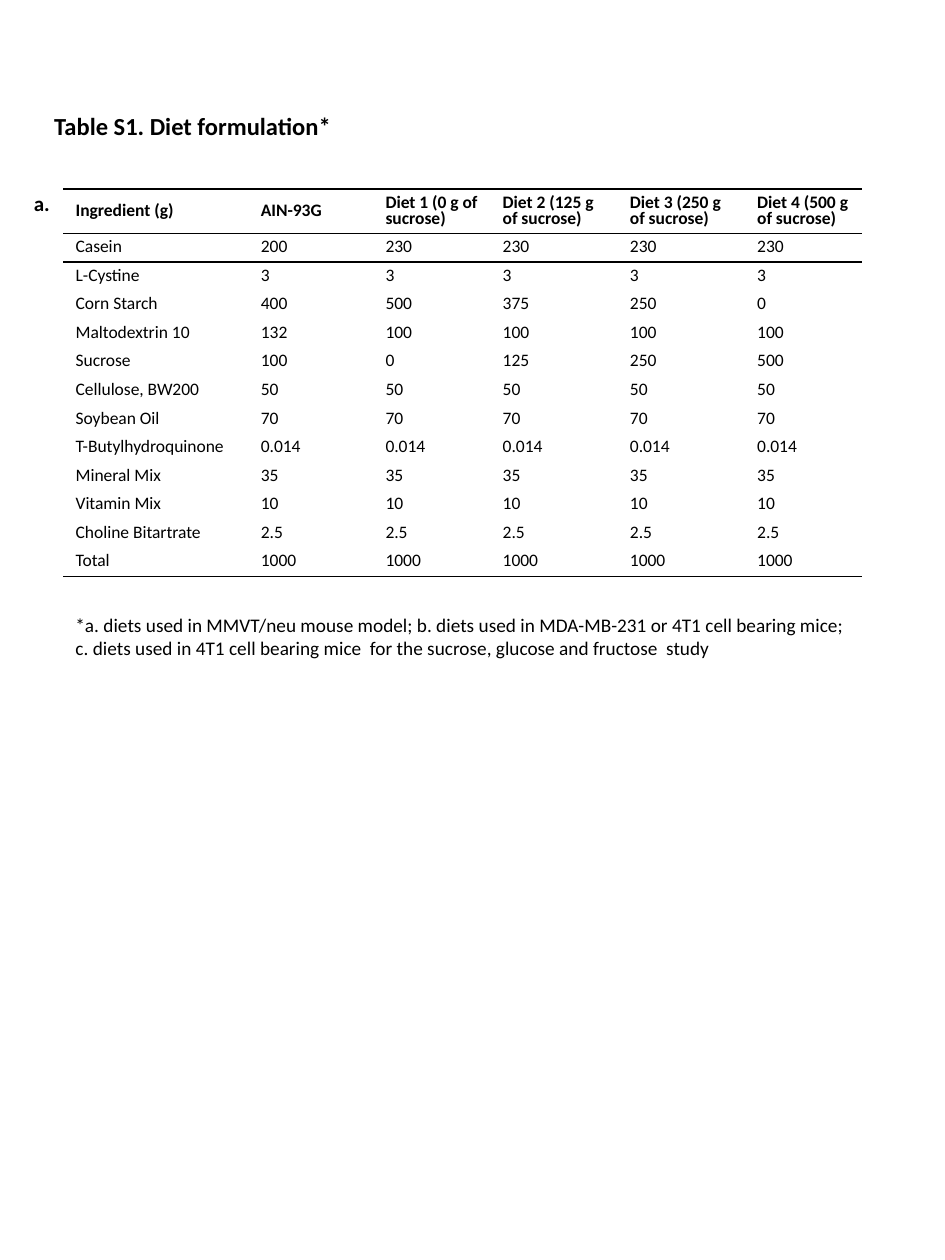
from lxml.etree import SubElement
from pptx import Presentation
from pptx.dml.color import RGBColor
from pptx.enum.text import MSO_ANCHOR, MSO_AUTO_SIZE, PP_ALIGN
from pptx.oxml.ns import qn
from pptx.util import Inches, Pt

SLIDE_WIDTH, SLIDE_HEIGHT = Inches(7.5), Inches(10)
BLACK, WHITE = "000000", "FFFFFF"
PLAIN_TABLE_STYLE = "{2D5ABB26-0587-4C30-8999-92F81FD0307C}"

# Areas as percentages of the slide: left, top, width, height
TITLE_AREA = (4.4, 5.4, 87.73, 9.2)
TABLE_AREA = (6.67, 15, 84.53, 26.1)
LABEL_AREA = (2.27, 14.6, 4.4, 3)
NOTE_AREA = (6.67, 48.2, 84.4, 4.7)

COLUMN_WIDTHS = (1.47, 0.99, 0.93, 1.01, 1.01, 0.93)
HEADER_HEIGHT, ROW_HEIGHT = 0.21, 0.2  # rows grow to fit their text

DIET_TABLE = [
    ("Ingredient (g)", "AIN-93G", "Diet 1 (0 g of sucrose)", "Diet 2 (125 g of sucrose)",
     "Diet 3 (250 g of sucrose)", "Diet 4 (500 g of sucrose)"),
    ("Casein", 200, 230, 230, 230, 230),
    ("L-Cystine", 3, 3, 3, 3, 3),
    ("Corn Starch", 400, 500, 375, 250, 0),
    ("Maltodextrin 10", 132, 100, 100, 100, 100),
    ("Sucrose", 100, 0, 125, 250, 500),
    ("Cellulose, BW200", 50, 50, 50, 50, 50),
    ("Soybean Oil", 70, 70, 70, 70, 70),
    ("T-Butylhydroquinone", 0.014, 0.014, 0.014, 0.014, 0.014),
    ("Mineral Mix", 35, 35, 35, 35, 35),
    ("Vitamin Mix", 10, 10, 10, 10, 10),
    ("Choline Bitartrate", 2.5, 2.5, 2.5, 2.5, 2.5),
    ("Total", 1000, 1000, 1000, 1000, 1000),
]
FOOTNOTE = ("*a. diets used in MMVT/neu mouse model; b. diets used in MDA-MB-231 or 4T1 cell "
            "bearing mice; c. diets used in 4T1 cell bearing mice  for the sucrose, glucose "
            "and fructose  study")


def color(value):
    return RGBColor.from_string(value)


def place(area):
    """Turn percentages of the slide into left, top, width and height."""
    sizes = (SLIDE_WIDTH, SLIDE_HEIGHT) * 2
    return [int(size * share / 100) for size, share in zip(sizes, area)]


def set_attributes(target, values):
    for name, value in values.items():
        setattr(target, name, value)


def write_text(text_frame, text, size, bold=False, line_spacing=None):
    text_frame.text = str(text)
    paragraph = text_frame.paragraphs[0]
    set_attributes(paragraph, {"alignment": PP_ALIGN.LEFT, "line_spacing": line_spacing})
    font = paragraph.runs[0].font
    set_attributes(font, {"name": "Calibri", "size": Pt(size), "bold": bold})
    font.color.rgb = color(BLACK)


def add_title(slide, text):
    title = slide.shapes.title
    set_attributes(title, dict(zip(("left", "top", "width", "height"), place(TITLE_AREA))))
    title.text_frame.vertical_anchor = MSO_ANCHOR.MIDDLE
    write_text(title.text_frame, text, 14, bold=True)


def add_text(slide, area, text, size, bold=False, wrap=True):
    text_frame = slide.shapes.add_textbox(*place(area)).text_frame
    set_attributes(text_frame, {"word_wrap": wrap, "auto_size": MSO_AUTO_SIZE.SHAPE_TO_FIT_TEXT})
    write_text(text_frame, text, size, bold)


def add_borders(cell, edges):
    """Draw 1 pt rules on the given edges; they must precede the cell's fill."""
    properties = cell._tc.get_or_add_tcPr()
    for position, edge in enumerate(edges):
        line = SubElement(properties, qn(f"a:ln{edge}"), w=str(Pt(1)))
        SubElement(SubElement(line, qn("a:solidFill")), qn("a:srgbClr"), val=BLACK)
        properties.insert(position, line)


def format_cell(cell, value, is_header, edges):
    cell.vertical_anchor = MSO_ANCHOR.MIDDLE
    write_text(cell.text_frame, value, 10, bold=is_header, line_spacing=0.75)
    if is_header:
        cell.fill.solid()
        cell.fill.fore_color.rgb = color(WHITE)
    else:
        cell.fill.background()
    add_borders(cell, edges)


def add_diet_table(slide):
    frame = slide.shapes.add_table(len(DIET_TABLE), len(COLUMN_WIDTHS), *place(TABLE_AREA))
    table = frame.table
    set_attributes(table, {"first_row": False, "horz_banding": False})
    table._tbl.tblPr.find(qn("a:tableStyleId")).text = PLAIN_TABLE_STYLE
    for column, width in zip(table.columns, COLUMN_WIDTHS):
        column.width = Inches(width)

    # Rules enclose the header and close the last row
    edges_by_row = {0: "TB", 1: "T", len(DIET_TABLE) - 1: "B"}
    for row_index, values in enumerate(DIET_TABLE):
        is_header = row_index == 0
        table.rows[row_index].height = Inches(HEADER_HEIGHT if is_header else ROW_HEIGHT)
        for column_index, value in enumerate(values):
            format_cell(table.cell(row_index, column_index), value, is_header,
                        edges_by_row.get(row_index, ""))


def main():
    presentation = Presentation()
    set_attributes(presentation, {"slide_width": SLIDE_WIDTH, "slide_height": SLIDE_HEIGHT})
    slide = presentation.slides.add_slide(presentation.slide_layouts.get_by_name("Title Only"))

    add_title(slide, "Table S1. Diet formulation*")
    add_diet_table(slide)
    add_text(slide, LABEL_AREA, "a.", 12, bold=True, wrap=False)
    add_text(slide, NOTE_AREA, FOOTNOTE, 11)
    presentation.save("out.pptx")


if __name__ == "__main__":
    main()
